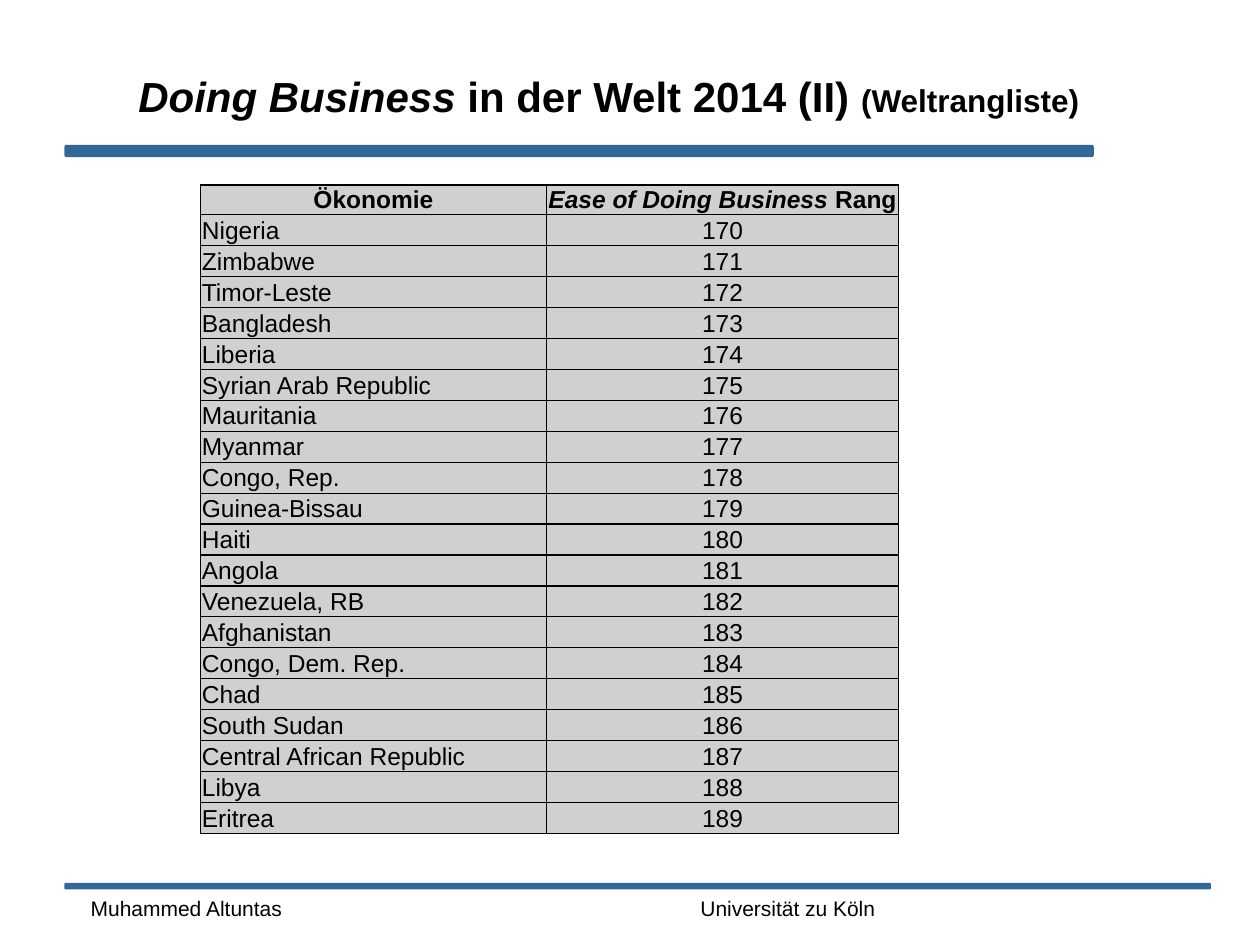
from dataclasses import dataclass

from lxml import etree
from pptx import Presentation
from pptx import util as u
from pptx.dml.color import RGBColor
from pptx.enum import shapes, text
from pptx.oxml import ns
from pptx.util import Cm


@dataclass(frozen=True)
class Theme:
    font: str = "Arial"
    ink: str = "000000"
    bar: str = "336699"
    cell: str = "D0D0D0"
    title: int = 24
    subtitle: int = 18
    table: int = 14
    footer: int = 12
    border: float = 0.75


THEME = Theme()
FIRST_RANK = 170
ECONOMIES = [
    "Nigeria", "Zimbabwe", "Timor-Leste", "Bangladesh", "Liberia",
    "Syrian Arab Republic", "Mauritania", "Myanmar", "Congo, Rep.",
    "Guinea-Bissau", "Haiti", "Angola", "Venezuela, RB", "Afghanistan",
    "Congo, Dem. Rep.", "Chad", "South Sudan", "Central African Republic",
    "Libya", "Eritrea",
]


def add_span(para, words, size, bold=False, italic=False):
    span = para.add_run()
    span.text = words
    font = span.font
    font.name, font.size = THEME.font, u.Pt(size)
    font.bold, font.italic = bold, italic
    font.color.rgb = RGBColor.from_string(THEME.ink)


def add_text_box(page, left, top, width, height):
    """Add an empty, vertically centred text box and return its paragraph."""
    frame = page.shapes.add_textbox(left, top, width, height).text_frame
    frame.word_wrap = True
    frame.vertical_anchor = text.MSO_ANCHOR.MIDDLE
    return frame.paragraphs[0]


def add_bar(page, left, top, width, height):
    bar = page.shapes.add_shape(
        shapes.MSO_SHAPE.ROUNDED_RECTANGLE, left, top, width, height)
    bar.shadow.inherit = False
    bar.fill.solid()
    bar.fill.fore_color.rgb = RGBColor.from_string(THEME.bar)
    bar.line.fill.background()


def add_header(page, left, top, width, height):
    para = add_text_box(page, left + Cm(1.24), top, Cm(22.2), height)
    add_span(para, "Doing Business ", THEME.title, bold=True, italic=True)
    add_span(para, "in der Welt 2014 (II) ", THEME.title, bold=True)
    add_span(para, "(Weltrangliste)", THEME.subtitle, bold=True)
    add_bar(page, left, top + Cm(2.59), width, Cm(0.25))


def add_footer(page, left, top, width, height):
    add_bar(page, left, top, width, Cm(0.13))
    labels = [("Muhammed Altuntas", Cm(0.28), Cm(5.92)),
              ("Universität zu Köln", Cm(12.57), Cm(8.05))]
    for words, offset, label_width in labels:
        para = add_text_box(page, left + offset, top + Cm(0.13),
                            label_width, height - Cm(0.13))
        add_span(para, words, THEME.footer)


def add_borders(cell):
    props = cell._tc.get_or_add_tcPr()
    for position, side in enumerate(("lnL", "lnR", "lnT", "lnB")):
        line = etree.Element(ns.qn(f"a:{side}"), w=str(u.Pt(THEME.border)))
        fill = etree.SubElement(line, ns.qn("a:solidFill"))
        etree.SubElement(fill, ns.qn("a:srgbClr"), val=THEME.ink)
        props.insert(position, line)


def format_cell(cell, inset, centred):
    """Style a table cell and return its paragraph."""
    cell.fill.solid()
    cell.fill.fore_color.rgb = RGBColor.from_string(THEME.cell)
    add_borders(cell)
    cell.vertical_anchor = text.MSO_ANCHOR.MIDDLE
    cell.margin_left = cell.margin_right = cell.margin_top = inset
    cell.margin_bottom = 0
    para = cell.text_frame.paragraphs[0]
    para.alignment = text.PP_ALIGN.CENTER if centred else text.PP_ALIGN.LEFT
    return para


def add_ranking(page, left, top, width, height):
    table = page.shapes.add_table(
        len(ECONOMIES) + 1, 2, left, top, width, height).table
    table.first_row = table.horz_banding = False
    table.columns[0].width = Cm(6.98)
    table.columns[1].width = width - Cm(6.98)

    header_height = Cm(0.58)
    table.rows[0].height = header_height
    economy, rank = (format_cell(table.cell(0, col), 0, True)
                     for col in range(2))
    add_span(economy, "Ökonomie", THEME.table, bold=True)
    add_span(rank, "Ease of Doing Business ", THEME.table,
             bold=True, italic=True)
    add_span(rank, "Rang", THEME.table, bold=True)

    for row, name in enumerate(ECONOMIES, start=1):
        table.rows[row].height = (height - header_height) // len(ECONOMIES)
        values = (name, str(FIRST_RANK + row - 1))
        for col, value in enumerate(values):
            para = format_cell(table.cell(row, col), Cm(0.03), col == 1)
            add_span(para, value, THEME.table)


def main():
    deck = Presentation()
    deck.slide_width, deck.slide_height = Cm(25.4), Cm(19.05)
    page = deck.slides.add_slide(deck.slide_layouts[6])
    add_header(page, Cm(1.3), Cm(0.33), Cm(20.75), Cm(3.18))
    add_ranking(page, Cm(4.04), Cm(3.73), Cm(14.07), Cm(12.69))
    add_footer(page, Cm(1.3), Cm(17.8), Cm(23.11), Cm(0.87))
    deck.save("out.pptx")


if __name__ == "__main__":
    main()
